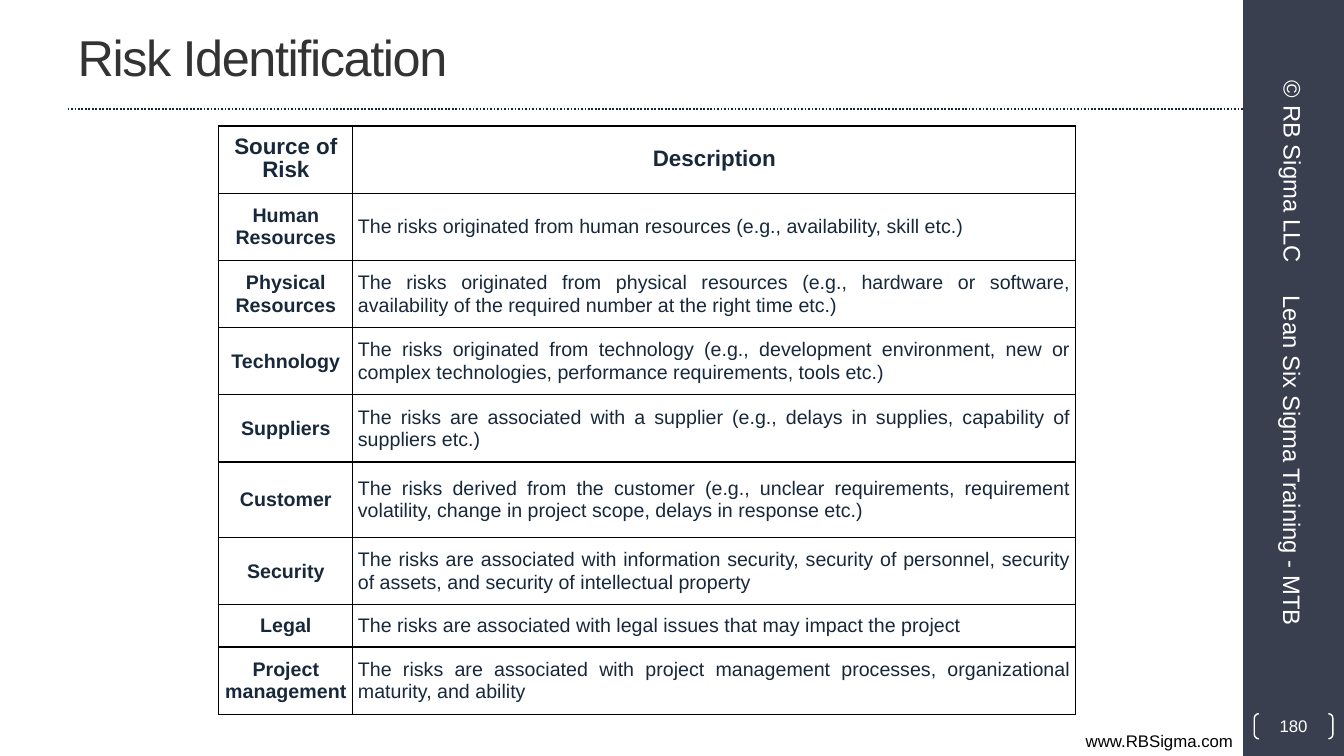
from lxml.etree import SubElement
from pptx import Presentation
from pptx.dml.color import RGBColor
from pptx.enum.dml import MSO_LINE
from pptx.enum.shapes import MSO_CONNECTOR, MSO_SHAPE
from pptx.enum.text import MSO_ANCHOR, PP_ALIGN
from pptx.oxml.ns import qn
from pptx.util import Inches, Pt

TITLE = "Risk Identification"
WEBSITE = "www.RBSigma.com"
PAGE = "180"
HEADERS = ("Source of Risk", "Description")
RISKS = [
    ("Human Resources",
     "The risks originated from human resources (e.g., availability, skill etc.)"),
    ("Physical Resources",
     "The risks originated from physical resources (e.g., hardware or software, "
     "availability of the required number at the right time etc.)"),
    ("Technology",
     "The risks originated from technology (e.g., development environment, new or "
     "complex technologies, performance requirements, tools etc.)"),
    ("Suppliers",
     "The risks are associated with a supplier (e.g., delays in supplies, "
     "capability of suppliers etc.)"),
    ("Customer",
     "The risks derived from the customer (e.g., unclear requirements, requirement "
     "volatility, change in project scope, delays in response etc.)"),
    ("Security",
     "The risks are associated with information security, security of personnel, "
     "security of assets, and security of intellectual property"),
    ("Legal",
     "The risks are associated with legal issues that may impact the project"),
    ("Project management",
     "The risks are associated with project management processes, organizational "
     "maturity, and ability"),
]
# text, (left, top, width, height) before rotation, alignment
SIDE_LABELS = [
    ("Lean Six Sigma Training - MTB", (10.86, 4.53, 3.92, 0.53), PP_ALIGN.LEFT),
    ("© RB Sigma LLC", (11.7, 1.44, 2.25, 0.53), PP_ALIGN.CENTER),
]

FONT = "Arial"
WHITE = RGBColor(0xFF, 0xFF, 0xFF)
BLACK = RGBColor(0, 0, 0)
SLATE = RGBColor(0x39, 0x3F, 0x4E)
NAVY = RGBColor(0x17, 0x27, 0x3B)
TABLE_INK = RGBColor(0x18, 0x28, 0x3B)
TITLE_GREY = RGBColor(0x33, 0x33, 0x33)

BAR_LEFT, MARGIN = 12.33, 0.67
COL_WIDTHS = (1.33, 7.17)
ROW_HEIGHT = 2 / 3
SPECIAL_HEIGHTS = {"Customer": 0.75, "Legal": 0.42}


def box(left, top, width, height):
    return [Inches(v) for v in (left, top, width, height)]


def write(tf, text, size, color, bold=False, align=PP_ALIGN.LEFT,
          anchor=MSO_ANCHOR.MIDDLE, line=None, tracking=None):
    tf.word_wrap = True
    tf.vertical_anchor = anchor
    p = tf.paragraphs[0]
    p.alignment = align
    if line:
        p.line_spacing = Pt(line)
    r = p.add_run()
    r.text = text
    r.font.name, r.font.size, r.font.bold = FONT, Pt(size), bold
    r.font.color.rgb = color
    if tracking:
        r.font._element.set("spc", str(tracking))


def set_borders(cell):
    tcPr = cell._tc.get_or_add_tcPr()
    for i, side in enumerate(("lnL", "lnR", "lnT", "lnB")):
        ln = tcPr.makeelement(qn(f"a:{side}"), {"w": str(Pt(1))})
        fill = SubElement(ln, qn("a:solidFill"))
        SubElement(fill, qn("a:srgbClr"), val=str(BLACK))
        tcPr.insert(i, ln)


def add_risk_table(s):
    rows = [HEADERS] + RISKS
    heights = [SPECIAL_HEIGHTS.get(source, ROW_HEIGHT) for source, _ in rows]
    table = s.shapes.add_table(
        len(rows), len(HEADERS),
        *box(2.17, 1.25, sum(COL_WIDTHS), sum(heights))).table
    table.first_row = table.horz_banding = False
    for col, width in zip(table.columns, COL_WIDTHS):
        col.width = Inches(width)
    for i, (row, texts) in enumerate(zip(table.rows, rows)):
        row.height = Inches(heights[i])
        for j, (cell, text) in enumerate(zip(row.cells, texts)):
            heading = i == 0 or j == 0
            cell.margin_left = cell.margin_right = Inches(0.05)
            cell.margin_top = cell.margin_bottom = 0
            cell.vertical_anchor = MSO_ANCHOR.MIDDLE
            cell.fill.background()
            set_borders(cell)
            write(cell.text_frame, text, 14 if i else 16, TABLE_INK,
                  bold=heading, line=16, anchor=None,
                  align=PP_ALIGN.CENTER if heading else PP_ALIGN.JUSTIFY)


def main():
    prs = Presentation()
    prs.slide_width, prs.slide_height = Inches(13.33), Inches(7.5)
    s = prs.slides.add_slide(prs.slide_layouts[5])

    title = s.shapes.title
    title.left, title.top, title.width, title.height = box(MARGIN, 0.03, 11.11, 1.05)
    write(title.text_frame, TITLE, 36, TITLE_GREY, tracking=-100)

    bar = s.shapes.add_shape(MSO_SHAPE.RECTANGLE, *box(BAR_LEFT, 0, 1, 7.5))
    bar.shadow.inherit = False
    bar.fill.solid()
    bar.fill.fore_color.rgb = SLATE
    bar.line.fill.background()

    rule = s.shapes.add_connector(MSO_CONNECTOR.STRAIGHT,
                                  *box(MARGIN, 1.08, BAR_LEFT, 1.08))
    rule.line.color.rgb = NAVY
    rule.line.width = Pt(1.25)
    rule.line.dash_style = MSO_LINE.ROUND_DOT
    SubElement(rule._element.spPr, qn("a:effectLst"))

    website = s.shapes.add_textbox(*box(0, 7.2, BAR_LEFT, 0.3))
    write(website.text_frame, WEBSITE, 12, BLACK, align=PP_ALIGN.RIGHT,
          anchor=MSO_ANCHOR.TOP)

    add_risk_table(s)

    for text, place, align in SIDE_LABELS:
        label = s.shapes.add_textbox(*box(*place))
        label.rotation = 90
        write(label.text_frame, text, 17, WHITE, align=align)

    page = s.shapes.add_shape(MSO_SHAPE.DOUBLE_BRACKET, *box(12.44, 7.08, 0.78, 0.25))
    page.shadow.inherit = False
    page.adjustments[0] = 0.18
    page.fill.background()
    page.line.color.rgb = WHITE
    page.line.width = Pt(1)
    tf = page.text_frame
    tf.margin_left = tf.margin_right = tf.margin_top = tf.margin_bottom = 0
    write(tf, PAGE, 12, WHITE, align=PP_ALIGN.CENTER)

    prs.save("out.pptx")


if __name__ == "__main__":
    main()
